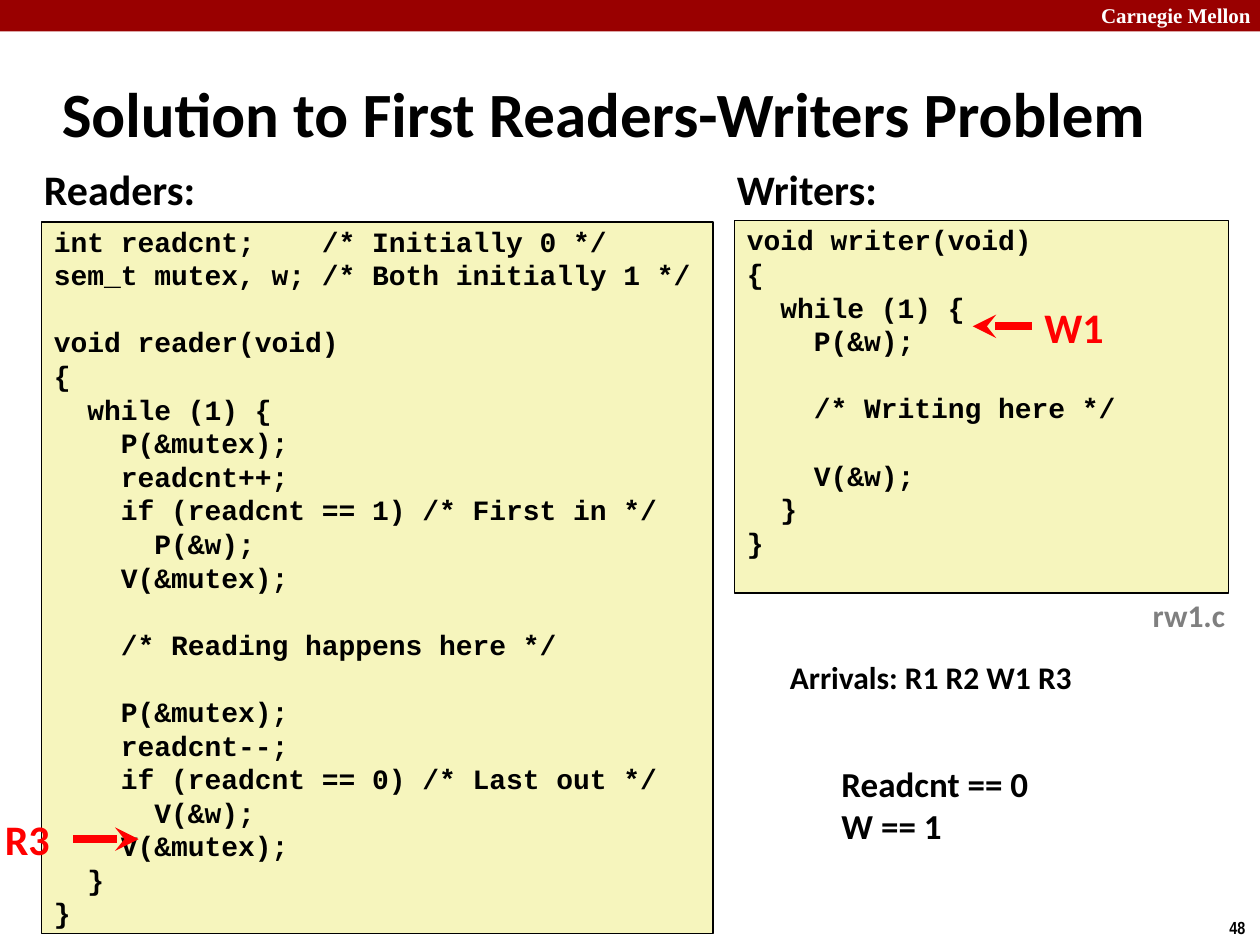
from typing import NamedTuple

import pptx
import pptx.dml.color
import pptx.enum.shapes
import pptx.enum.text
import pptx.oxml
import pptx.oxml.ns
import pptx.util

Inches = pptx.util.Inches
Pt = pptx.util.Pt
RGBColor = pptx.dml.color.RGBColor
Anchor = pptx.enum.text.MSO_ANCHOR
RECT = pptx.enum.shapes.MSO_SHAPE.RECTANGLE

BLACK = RGBColor(0x00, 0x00, 0x00)
WHITE = RGBColor(0xFF, 0xFF, 0xFF)
MAROON = RGBColor(0x99, 0x00, 0x00)
CREAM = RGBColor(0xF6, 0xF5, 0xBD)
GREY = RGBColor(0x7F, 0x7F, 0x7F)
RED = RGBColor(0xFF, 0x00, 0x00)

READER = """int readcnt;    /* Initially 0 */
sem_t mutex, w; /* Both initially 1 */

void reader(void)
{
  while (1) {
    P(&mutex);
    readcnt++;
    if (readcnt == 1) /* First in */
      P(&w);
    V(&mutex);

    /* Reading happens here */

    P(&mutex);
    readcnt--;
    if (readcnt == 0) /* Last out */
      V(&w);
    V(&mutex);
  }
}"""

WRITER = """void writer(void)
{
  while (1) {
    P(&w);

    /* Writing here */

    V(&w);
  }
}"""


class Box(NamedTuple):
    left: float
    top: float
    width: float
    height: float

    def size(self) -> tuple:
        return tuple(Inches(v) for v in self)


class Label(NamedTuple):
    text: str
    box: Box
    size: int
    color: RGBColor = BLACK
    font: str = "Calibri"


class Code(NamedTuple):
    text: str
    box: Box


class Marker(NamedTuple):
    label: Label
    site: int  # side of the label where the arrow starts
    tip: float


LABELS = [
    Label("Carnegie Mellon", Box(8.64, -0.03, 1.43, 0.3), 12, WHITE, "Times New Roman"),
    Label("48", Box(9.66, 7.23, 0.34, 0.27), 10, BLACK, "Arial Narrow"),
    Label("Readers:", Box(0.25, 1.25, 1.41, 0.5), 24),
    Label("Writers:", Box(5.75, 1.25, 1.32, 0.5), 24),
    Label("rw1.c", Box(9.05, 4.68, 0.78, 0.4), 18, GREY),
    Label("Arrivals: R1 R2 W1 R3", Box(6.17, 5.17, 2.46, 0.4), 18),
    Label("Readcnt == 0\nW == 1", Box(6.58, 6, 1.7, 0.77), 20),
]
CODES = [
    Code(READER, Box(0.33, 1.76, 5.33, 5.65)),
    Code(WRITER, Box(5.83, 1.75, 3.92, 2.96)),
]
MARKERS = [
    Marker(Label("W1", Box(8.19, 2.34, 0.75, 0.5), 24, RED), 1, 7.72),
    Marker(Label("R3", Box(-0.06, 6.41, 0.64, 0.5), 24, RED), 3, 1.1),
]


def write(shape, text: str, *, size: int, font: str = "Calibri",
          color: RGBColor = BLACK, anchor=Anchor.TOP, pad: float = 0.05,
          wrap: bool = False) -> None:
    frame = shape.text_frame
    frame.text = text
    frame.word_wrap = wrap
    frame.vertical_anchor = anchor
    frame.margin_left = frame.margin_right = Inches(0.1)
    frame.margin_top = frame.margin_bottom = Inches(pad)
    for para in frame.paragraphs:
        para.alignment = pptx.enum.text.PP_ALIGN.LEFT
        para.font.name = font
        para.font.size = Pt(size)
        para.font.bold = True
        para.font.color.rgb = color


def panel(shapes, box: Box, fill: RGBColor):
    shape = shapes.add_shape(RECT, *box.size())
    shape.shadow.inherit = False
    shape.fill.solid()
    shape.fill.fore_color.rgb = fill
    shape.line.fill.background()
    return shape


def code(shapes, item: Code) -> None:
    shape = panel(shapes, item.box, CREAM)
    shape.line.color.rgb = BLACK
    shape.line.width = Pt(1)
    write(shape, item.text, size=16, font="Courier New", pad=0.02)


def label(shapes, item: Label):
    shape = shapes.add_textbox(*item.box.size())
    write(shape, item.text, size=item.size, font=item.font, color=item.color)
    return shape


def marker(shapes, item: Marker) -> None:
    group = shapes.add_group_shape()
    text = label(group.shapes, item.label)
    box = item.label.box
    start = box.left if item.site == 1 else box.left + box.width
    y = Inches(box.top + box.height / 2)
    line = group.shapes.add_connector(
        pptx.enum.shapes.MSO_CONNECTOR.STRAIGHT, Inches(start), y, Inches(item.tip), y)
    line.begin_connect(text, item.site)
    line.line.color.rgb = RED
    line.line.width = Pt(4.5)
    # Arrowhead, and no theme shadow
    space = pptx.oxml.ns.nsdecls("a")
    head = pptx.oxml.parse_xml(f'<a:tailEnd {space} type="stealth"/>')
    line.line._get_or_add_ln().append(head)
    line._element.spPr.append(pptx.oxml.parse_xml(f"<a:effectLst {space}/>"))


def main() -> None:
    deck = pptx.Presentation()
    deck.slide_width, deck.slide_height = Inches(10), Inches(7.5)
    slide = deck.slides.add_slide(deck.slide_layouts[5])
    shapes = slide.shapes

    # Title
    title = shapes.title
    title.left, title.top, title.width, title.height = Box(0.39, 0.48, 9.36, 0.83).size()
    write(title, "Solution to First Readers-Writers Problem", size=36,
          anchor=Anchor.MIDDLE, wrap=True)

    # Top band, code panels, labels and position markers
    panel(shapes, Box(0, 0, 10, 0.25), MAROON)
    for item in CODES:
        code(shapes, item)
    for item in LABELS:
        label(shapes, item)
    for item in MARKERS:
        marker(shapes, item)

    deck.save("out.pptx")


if __name__ == "__main__":
    main()
